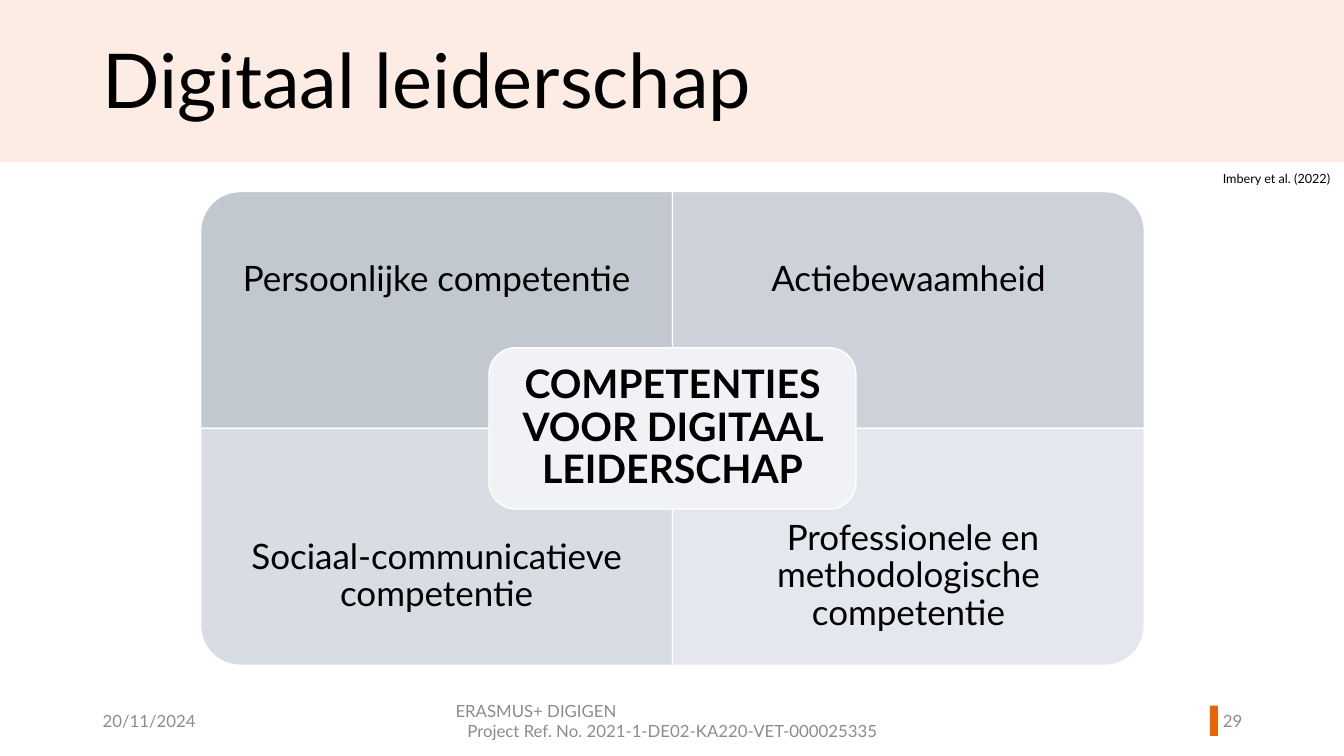
from dataclasses import dataclass

from pptx import Presentation
from pptx.dml.color import RGBColor
from pptx.enum.shapes import MSO_SHAPE
from pptx.enum.text import MSO_ANCHOR, MSO_AUTO_SIZE, PP_ALIGN
from pptx.util import Pt

RECT, ROUNDED = MSO_SHAPE.RECTANGLE, MSO_SHAPE.ROUNDED_RECTANGLE
ONE_ROUND = MSO_SHAPE.ROUND_1_RECTANGLE
LEFT, CENTER, RIGHT = PP_ALIGN.LEFT, PP_ALIGN.CENTER, PP_ALIGN.RIGHT
TOP, MIDDLE = MSO_ANCHOR.TOP, MSO_ANCHOR.MIDDLE
NO_AUTOFIT = MSO_AUTO_SIZE.NONE
EMU_PER_PX = 9144
TITLE_ONLY = 5


@dataclass(frozen=True)
class Theme:
    """Colours, font and type sizes of the slide."""
    font: str = "Lato"
    ink: str = "000000"
    muted: str = "8C8C8C"
    white: str = "FFFFFF"
    band: str = "FDECE3"
    accent: str = "E86507"
    center: str = "F0F2F5"
    title_size: int = 54
    center_size: int = 28
    quadrant_size: int = 25
    footer_size: int = 12
    source_size: int = 9


THEME = Theme()

QUADRANTS = [
    ("Persoonlijke competentie", "C2C8D0", 270),
    ("Actiebewaamheid", "CDD2DA", 0),
    ("Sociaal-communicatieve competentie", "D8DDE4", 180),
    (" Professionele en methodologische competentie", "E4E8EE", 90),
]


def emu(*lengths):
    """Turn px lengths into whole EMU."""
    return [round(length * EMU_PER_PX) for length in lengths]


def apply(target, formats):
    """Set every attribute of a format dict on the target."""
    for name, value in formats.items():
        setattr(target, name, value)


def write(frame, lines, size, color=THEME.ink, bold=False, anchor=MIDDLE,
          spacing=1.0, inset=None, wrap=True):
    """Fill a text frame with (text, alignment) paragraphs."""
    apply(frame, {"word_wrap": wrap, "auto_size": NO_AUTOFIT,
                  "vertical_anchor": anchor})
    if inset is not None:
        margin = emu(inset)[0]
        apply(frame, {f"margin_{side}": margin
                      for side in ("left", "top", "right", "bottom")})
    for index, (text, alignment) in enumerate(lines):
        paragraph = frame.add_paragraph() if index else frame.paragraphs[0]
        apply(paragraph, {"alignment": alignment, "line_spacing": spacing})
        run = paragraph.add_run()
        run.text = text
        apply(run.font, {"name": THEME.font, "size": Pt(size), "bold": bold})
        run.font.color.rgb = RGBColor.from_string(color)


def add_text(slide, box, lines, size, **formats):
    """Add a text box filling the given box."""
    label = slide.shapes.add_textbox(*emu(*box))
    write(label.text_frame, lines, size, **formats)


def add_panel(slide, kind, box, fill, outline=None, rotation=0):
    """Add a filled shape that covers the box after its rotation."""
    left, top, width, height = box
    if rotation % 180:
        left, top = left + (width - height) / 2, top + (height - width) / 2
        width, height = height, width
    panel = slide.shapes.add_shape(kind, *emu(left, top, width, height))
    panel.rotation = rotation
    panel.shadow.inherit = False
    panel.fill.solid()
    panel.fill.fore_color.rgb = RGBColor.from_string(fill)
    if outline:
        panel.line.color.rgb = RGBColor.from_string(outline)
        panel.line.width = Pt(1)
    else:
        panel.line.fill.background()


def build_header(slide, box):
    """Place the band, the title over it and the source below it."""
    left, top, width, height = box
    add_panel(slide, RECT, box, THEME.band)
    title = slide.shapes.title
    title.element.getparent().append(title.element)
    places = emu(left + 92, top + 41, 1058, 85)
    apply(title, dict(zip(("left", "top", "width", "height"), places)))
    write(title.text_frame, [("Digitaal leiderschap", LEFT)],
          THEME.title_size, spacing=0.9)
    add_text(slide, (left + width - 130, top + height + 4, 130, 25),
             [("Imbery et al. (2022)", LEFT)], THEME.source_size,
             anchor=TOP, wrap=False)


def build_matrix(slide, box):
    """Place four quadrants and the central theme over their crossing."""
    left, top, width, height = box
    cell_width, cell_height = width // 2, height // 2
    label_height = cell_height * 3 // 4
    for index, (text, fill, rotation) in enumerate(QUADRANTS):
        row, column = divmod(index, 2)
        x, y = left + column * cell_width, top + row * cell_height
        add_panel(slide, ONE_ROUND, (x, y, cell_width, cell_height), fill,
                  THEME.white, rotation)
        label_top = y + row * (cell_height - label_height)
        add_text(slide, (x, label_top, cell_width, label_height),
                 [(text, CENTER)], THEME.quadrant_size, spacing=0.9, inset=19)
    hub_width, hub_height = 364, 160
    hub = (left + (width - hub_width) // 2, top + (height - hub_height) // 2,
           hub_width, hub_height)
    add_panel(slide, ROUNDED, hub, THEME.center, THEME.white)
    add_text(slide, (hub[0] + 8, hub[1] + 8, hub_width - 16, hub_height - 16),
             [("COMPETENTIES VOOR DIGITAAL LEIDERSCHAP", CENTER)],
             THEME.center_size, bold=True, spacing=0.9, inset=12)


def build_footer(slide, box):
    """Place the date, the project reference and the page number."""
    left, top, width, height = box
    add_panel(slide, RECT, (left + width - 42, top + 5, 8, 30), THEME.accent)
    project = [("ERASMUS+ DIGIGEN", LEFT),
               ("Project Ref. No. 2021-1-DE02-KA220-VET-000025335", CENTER)]
    parts = [
        (left, 300, [("20/11/2024", LEFT)]),
        (left + (width - 450) // 2, 450, project),
        (left + width - 65, 65, [("29", RIGHT)]),
    ]
    for x, part_width, lines in parts:
        add_text(slide, (x, top, part_width, height), lines,
                 THEME.footer_size, color=THEME.muted)


def main():
    """Build the slide and save it."""
    deck = Presentation()
    deck.slide_width, deck.slide_height = emu(1333, 750)
    slide = deck.slides.add_slide(deck.slide_layouts[TITLE_ONLY])
    build_header(slide, (0, 0, 1333, 161))
    build_matrix(slide, (199, 190, 936, 470))
    build_footer(slide, (92, 695, 1150, 40))
    deck.save("out.pptx")


if __name__ == "__main__":
    main()
